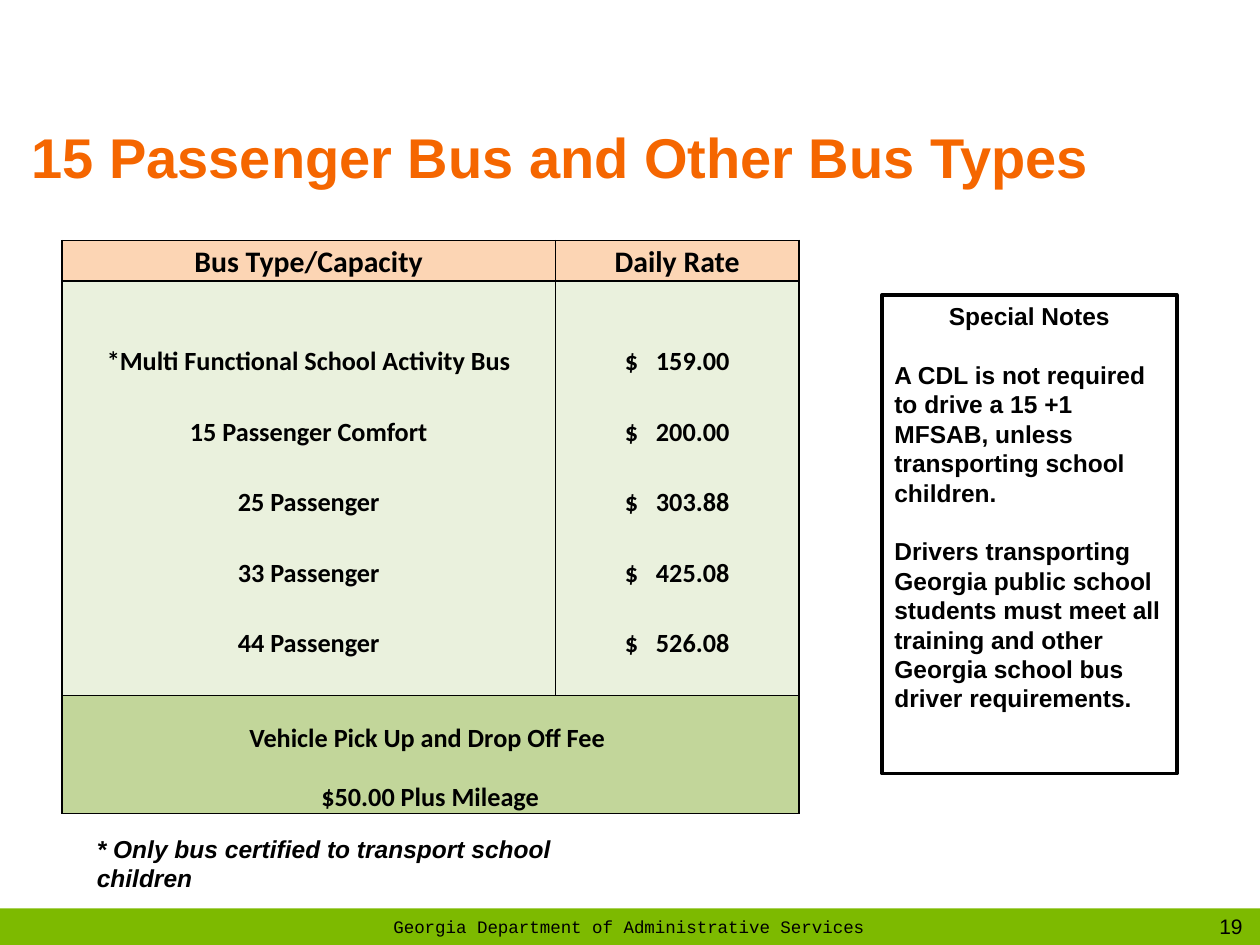
"""Builds the bus rate slide with its rate table and special notes."""
from pptx import Presentation
from pptx.dml.color import RGBColor
from pptx.enum.shapes import MSO_SHAPE
from pptx.enum.text import MSO_ANCHOR, PP_ALIGN
from pptx.oxml.ns import qn
from pptx.util import Emu, Pt
from lxml.etree import SubElement

PX = 9144
BLACK = RGBColor(0, 0, 0)
WHITE = RGBColor(255, 255, 255)
GREEN = RGBColor(0x7D, 0xBA, 0x00)
ORANGE = RGBColor(0xF5, 0x66, 0x00)
PEACH = RGBColor(0xFC, 0xD5, 0xB4)
PALE = RGBColor(0xEA, 0xF1, 0xDD)
SAGE = RGBColor(0xC2, 0xD6, 0x9A)

COLUMNS = [191, 201, 193]
ROWS = [32, 28, 49] + [28] * 9 + [19, 28, 19, 28]
SECTIONS = [(0, 0, PEACH), (1, 11, PALE), (12, 15, SAGE)]
RATES = [
    ("*Multi Functional School Activity Bus", "159.00"),
    ("15 Passenger Comfort", "200.00"),
    ("25 Passenger", "303.88"),
    ("33 Passenger", "425.08"),
    ("44 Passenger", "526.08"),
]
NOTES = [
    "A CDL is not required to drive a 15 +1 MFSAB, unless transporting school children.",
    "Drivers transporting Georgia public school students must meet all training "
    "and other Georgia school bus driver requirements.",
]


class Builder:
    """Holds the style and the current slide."""

    def __init__(self, slide):
        self.slide = slide
        self.font = {"name": "Arial", "size": 14, "bold": True, "color": BLACK}

    def box(self, *at):
        return [Emu(v * PX) for v in at]

    def run(self, p, text, align=PP_ALIGN.LEFT, **style):
        p.alignment = align
        r = p.add_run()
        r.text = text
        fmt = {**self.font, **style}
        r.font.color.rgb = fmt.pop("color")
        fmt["size"] = Pt(fmt["size"])
        for key, value in fmt.items():
            setattr(r.font, key, value)

    def text(self, at, text, anchor=MSO_ANCHOR.TOP, **style):
        tf = self.slide.shapes.add_textbox(*self.box(*at)).text_frame
        tf.word_wrap = True
        tf.vertical_anchor = anchor
        self.run(tf.paragraphs[0], text, **style)

    def rect(self, at, fill, line=None):
        sp = self.slide.shapes.add_shape(MSO_SHAPE.RECTANGLE, *self.box(*at))
        sp.shadow.inherit = False
        sp.fill.solid()
        sp.fill.fore_color.rgb = fill
        if line:
            sp.line.color.rgb = BLACK
            sp.line.width = Pt(line)
        else:
            sp.line.fill.background()
        return sp

    def notes(self, at, title, notes):
        tf = self.rect(at, WHITE, 2).text_frame
        tf.word_wrap = True
        tf.vertical_anchor = MSO_ANCHOR.TOP
        self.run(tf.paragraphs[0], title, PP_ALIGN.CENTER)
        for note in notes:
            p = tf.add_paragraph()
            p.space_before = Pt(16.8)
            self.run(p, note)

    def borders(self, cell, sides):
        tc_pr = cell._tc.get_or_add_tcPr()
        for i, side in enumerate("LRTB"):
            ln = SubElement(tc_pr, qn(f"a:ln{side}"), w=str(Pt(1)))
            if side in sides:
                fill = SubElement(ln, qn("a:solidFill"))
                SubElement(fill, qn("a:srgbClr"), val=str(BLACK))
            else:
                SubElement(ln, qn("a:noFill"))
            tc_pr.insert(i, ln)

    def cell(self, cell, fill, sides, text, size):
        cell.fill.solid()
        cell.fill.fore_color.rgb = fill
        self.borders(cell, sides)
        cell.vertical_anchor = MSO_ANCHOR.BOTTOM
        margins = {"left": 1, "right": 1, "top": 1, "bottom": 0}
        for side, value in margins.items():
            setattr(cell, f"margin_{side}", Emu(value * PX))
        p = cell.text_frame.paragraphs[0]
        if text:
            self.run(p, text, PP_ALIGN.CENTER, name="Calibri", size=size)
        else:
            p._p.get_or_add_endParaRPr().set("sz", "800")

    def table(self, left, top, texts, spans):
        at = self.box(left, top, sum(COLUMNS), sum(ROWS))
        tbl = self.slide.shapes.add_table(len(ROWS), len(COLUMNS), *at).table
        tbl.first_row = tbl.horz_banding = False
        for items, sizes, name in ((tbl.columns, COLUMNS, "width"), (tbl.rows, ROWS, "height")):
            for item, size in zip(items, sizes):
                setattr(item, name, Emu(size * PX))
        for first, last, fill in SECTIONS:
            for row in range(first, last + 1):
                span = spans.get(row, 1)
                if span > 1:
                    tbl.cell(row, 0).merge(tbl.cell(row, span - 1))
                split = fill != SAGE
                for col in range(3):
                    end = span - 1 if col < span else col
                    sides = {
                        "L": col == 0 or split and col == 2,
                        "R": end == 2 or split and end == 1,
                        "T": row == first,
                        "B": row == last,
                    }
                    shown = [side for side in sides if sides[side]]
                    size = 17 if row == 0 else 15
                    self.cell(tbl.cell(row, col), fill, shown, texts.get((row, col)), size)


def main():
    prs = Presentation()
    prs.slide_width, prs.slide_height = Emu(1000 * PX), Emu(750 * PX)
    b = Builder(prs.slides.add_slide(prs.slide_layouts[6]))

    b.rect((0, 721, 1000, 29), GREEN)
    b.text((954, 720, 46, 30), "19", align=PP_ALIGN.CENTER, size=12, bold=False)
    b.text((299, 722, 400, 28), "Georgia Department of Administrative Services",
           align=PP_ALIGN.CENTER, name="Courier New", size=10, bold=False)
    b.text((15, 74, 869, 100), "15 Passenger Bus and Other Bus Types",
           anchor=MSO_ANCHOR.MIDDLE, size=32, color=ORANGE)

    texts = {
        (0, 0): "Bus Type/Capacity",
        (0, 2): "Daily Rate",
        (13, 0): "Vehicle Pick Up and Drop Off Fee ",
        (15, 0): "$50.00 Plus Mileage",
    }
    for i, (bus, rate) in enumerate(RATES):
        texts[2 * i + 2, 0] = bus
        texts[2 * i + 2, 2] = f" $   {rate} "
    spans = {**dict.fromkeys((0, 2, 4, 6, 8, 9, 10), 2), 13: 3, 15: 3}
    b.table(49, 191, texts, spans)

    b.notes((700, 234, 234, 380), "Special Notes", NOTES)
    b.text((67, 657, 460, 34), "* Only bus certified to transport school children", italic=True)
    prs.save("out.pptx")


if __name__ == "__main__":
    main()
